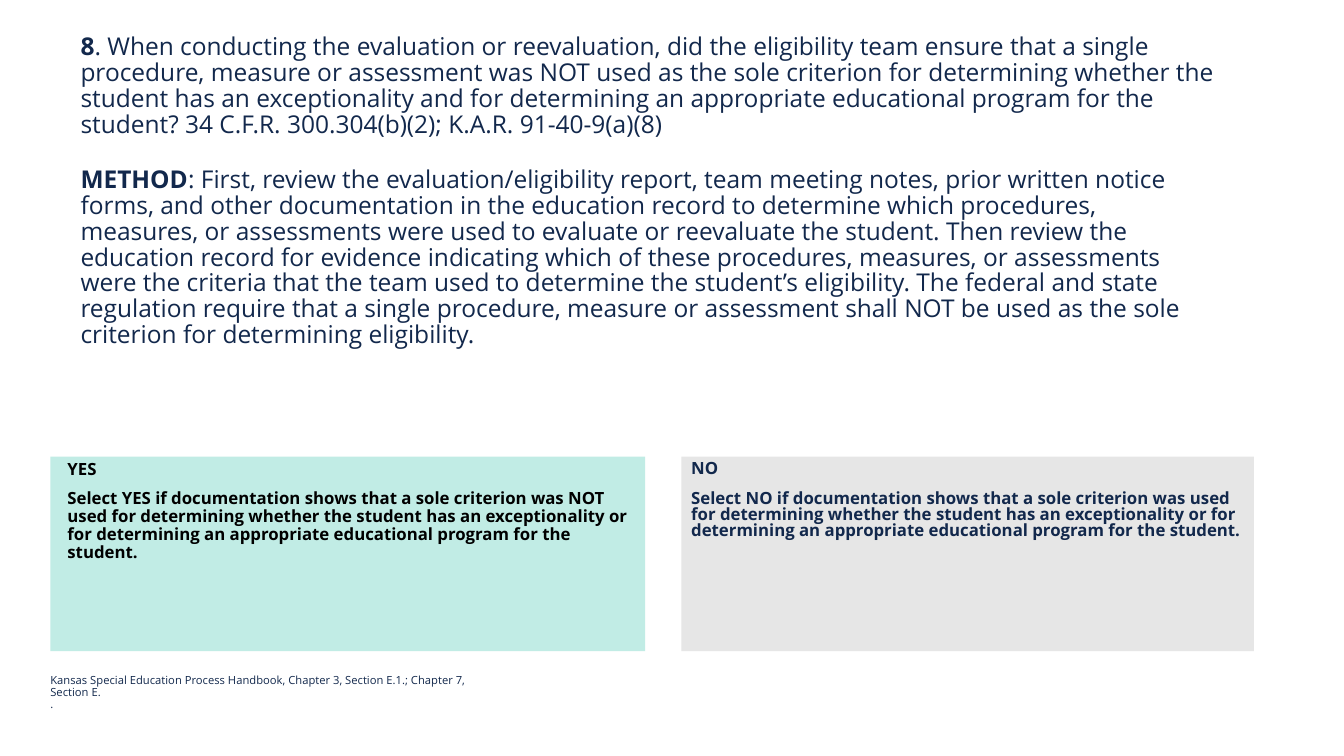
"""Build the slide on question 8, the sole criterion check, with its YES and NO answers."""
import pptx
import pptx.dml.color
import pptx.enum.shapes
import pptx.enum.text
import pptx.util
from dataclasses import dataclass

Cm = pptx.util.Cm
Pt = pptx.util.Pt


@dataclass(frozen=True)
class Theme:
    font: str = "Open Sans"
    navy: str = "12284C"
    black: str = "000000"
    mint: str = "C1ECE5"
    grey: str = "E6E6E6"
    body: float = 17.5
    answer: float = 12
    source: float = 8


theme = Theme()


def write(box, text, size, color=theme.navy, lead="", bold=False, spacing=0.9, before=0):
    """Add a paragraph, opened by a bold lead if one is given."""
    frame = box.text_frame
    para = frame.paragraphs[0]
    if para.runs:
        para = frame.add_paragraph()
        para.space_before = Pt(before)
    para.alignment = pptx.enum.text.PP_ALIGN.LEFT
    para.line_spacing = spacing
    for words, heavy in ((lead, True), (text, bold)):
        if words:
            span = para.add_run()
            span.text = words
            span.font.name = theme.font
            span.font.size = Pt(size)
            span.font.bold = heavy
            span.font.color.rgb = pptx.dml.color.RGBColor.from_string(color)


deck = pptx.Presentation()
deck.slide_width, deck.slide_height = Cm(33.87), Cm(19.05)
page = deck.slides.add_slide(deck.slide_layouts[6])

question = page.shapes.add_textbox(Cm(1.78), Cm(0.76), Cm(29.21), Cm(10.77))
question.text_frame.word_wrap = True
write(
    question,
    ". When conducting the evaluation or reevaluation, did the eligibility team ensure that "
    "a single procedure, measure or assessment was NOT used as the sole criterion for "
    "determining whether the student has an exceptionality and for determining an appropriate "
    "educational program for the student? 34 C.F.R. 300.304(b)(2); K.A.R. 91-40-9(a)(8)",
    theme.body, lead="8", spacing=0.88,
)
write(
    question,
    ": First, review the evaluation/eligibility report, team meeting notes, prior written "
    "notice forms, and other documentation in the education record to determine which "
    "procedures, measures, or assessments were used to evaluate or reevaluate the student. "
    "Then review the education record for evidence indicating which of these procedures, "
    "measures, or assessments were the criteria that the team used to determine the student’s "
    "eligibility. The federal and state regulation require that a single procedure, measure or "
    "assessment shall NOT be used as the sole criterion for determining eligibility.",
    theme.body, lead="METHOD", spacing=0.88, before=21,
)

answers = [
    ("YES", "was NOT used", 1.27, 14.99, theme.mint, theme.black, 0.43, 0.18, 0.1, 0.89, 8),
    ("NO", "was used", 17.17, 14.43, theme.grey, theme.navy, 0.25, 0.25, 0.13, 0.79, 10),
]
for answer, finding, left, width, fill, color, inset, right, top, spacing, before in answers:
    box = page.shapes.add_shape(
        pptx.enum.shapes.MSO_SHAPE.RECTANGLE, Cm(left), Cm(11.51), Cm(width), Cm(4.9)
    )
    box.shadow.inherit = False
    box.fill.solid()
    box.fill.fore_color.rgb = pptx.dml.color.RGBColor.from_string(fill)
    box.line.fill.background()
    frame = box.text_frame
    frame.word_wrap = True
    frame.vertical_anchor = pptx.enum.text.MSO_ANCHOR.TOP
    frame.margin_left, frame.margin_right = Cm(inset), Cm(right)
    frame.margin_top = frame.margin_bottom = Cm(top)
    write(box, answer, theme.answer, color, bold=True, spacing=spacing)
    write(
        box,
        f"Select {answer} if documentation shows that a sole criterion {finding} for "
        "determining whether the student has an exceptionality or for determining an "
        "appropriate educational program for the student.",
        theme.answer, color, bold=True, spacing=spacing, before=before,
    )

source = page.shapes.add_textbox(Cm(1.02), Cm(16.89), Cm(11.7), Cm(0.94))
source.text_frame.word_wrap = True
write(
    source,
    "Kansas Special Education Process Handbook, Chapter 3, Section E.1.; Chapter 7, Section E.",
    theme.source,
)
write(source, ".", theme.source)

deck.save("out.pptx")
